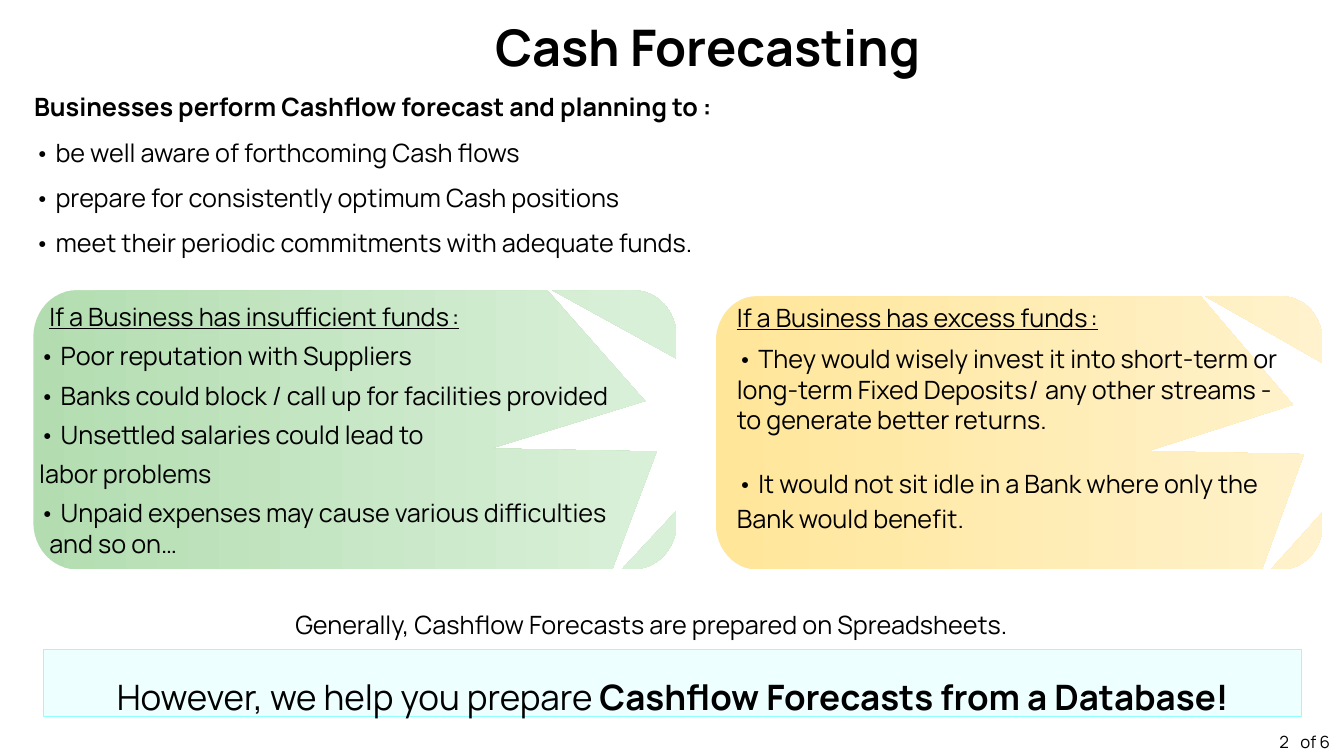
from math import cos, pi, sin
from pptx import Presentation
from pptx.dml.color import RGBColor
from pptx.enum.shapes import MSO_SHAPE
from pptx.enum.text import MSO_ANCHOR, PP_ALIGN
from pptx.util import Inches, Pt

WIDE, HIGH = Inches(13.33), Inches(7.5)
COL, ROW = WIDE / 100, HIGH / 100
FONT = "Manrope"
HUES = {
    "ink": "000000", "pale": "EDFFFF", "edge": "8FFFFF",
    "moss": "B3DDB1", "mint": "D9F0D8", "gold": "FFE699", "cream": "FFF2CC",
}
BOLD = {"bold": True}
LINE = {"underline": True}
MID = {"vertical_anchor": MSO_ANCHOR.MIDDLE}
FLAT = {f"margin_{side}": 0 for side in ("left", "top", "right", "bottom")}
CENTRE = {"alignment": PP_ALIGN.CENTER}
OPEN = {"line_spacing": 1.5}
LOOSE = {"line_spacing": 1.3}


def hue(name):
    """Return the named colour."""
    return RGBColor.from_string(HUES[name])


def style(item, form):
    """Set each format value on the item."""
    for key, value in form.items():
        setattr(item, key, value)


def scale(box):
    """Turn columns and rows into slide lengths."""
    return [round(part * unit) for part, unit in zip(box, (COL, ROW) * 2)]


def write(frame, paras, size, form=None):
    """Fill a frame with (runs, format, indent) paragraphs."""
    base = {"word_wrap": True, "vertical_anchor": MSO_ANCHOR.TOP}
    style(frame, base | (form or {}))
    for i, (runs, look, dent) in enumerate(paras):
        para = frame.add_paragraph() if i else frame.paragraphs[0]
        style(para, look)
        if dent:
            para._p.get_or_add_pPr().set("marL", str(Inches(dent)))
        for text, face, gap in runs:
            run = para.add_run()
            run.text = text
            style(run.font, {"name": FONT, "size": Pt(size), "bold": False} | face)
            run.font.color.rgb = hue("ink")
            if gap:
                run.font._element.set("spc", str(gap * 100))


def para(text, look=None, face=None, dent=0):
    """Describe a paragraph with one run."""
    return [(text, face or {}, 0)], look or {}, dent


def head(text, dent=0):
    """Describe an underlined heading with a spaced ending."""
    return [(text[:-2], LINE, 0), (text[-2:], LINE, 2)], {}, dent


def label(slide, box, paras, size=18, form=None):
    """Add a text box."""
    write(slide.shapes.add_textbox(*scale(box)).text_frame, paras, size, form)


def arc(x, y, turn):
    """List points of a quarter corner around a centre, as shares."""
    steps = [(turn + i / 12) * pi / 2 for i in range(13)]
    return [(x + 0.067 * cos(a), y + 0.167 * sin(a)) for a in steps]


def panel(slide, box, tints, stop, texts):
    """Draw a shaded card cut by white rays, with its texts."""
    left, top, wide, high = scale(box)
    low, east, west = 0.833, 0.933, 0.067
    parts = [
        [(1, 0.79), *arc(east, low, 0), (0.915, 1)],
        [(0.807, 0), *arc(east, 0.167, 3), (1, 0.245)],
        [(0.799, 0), (0.951, 0.397), (0.712, 0.567), (0.969, 0.578), (0.9, 1),
         *arc(west, low, 1), *arc(west, 0.167, 2)],
    ]
    pen = None
    for part in parts:
        dots = [(left + x * wide, top + y * high) for x, y in part]
        if pen:
            pen.move_to(*dots[0])
        else:
            pen = slide.shapes.build_freeform(*dots[0])
        pen.add_line_segments(dots[1:], close=True)
    card = pen.convert_to_shape()
    card.shadow.inherit = False
    card.line.fill.background()
    card.fill.gradient()
    card.fill.gradient_angle = 0
    for mark, tint, spot in zip(card.fill.gradient_stops, tints, (0, stop)):
        mark.color.rgb = hue(tint)
        mark.position = spot
    for (dx, dy, w, h), paras in texts:
        label(slide, (box[0] + dx, box[1] + dy, w, h), paras)


def top(slide):
    """Place the title and the list of aims."""
    title = slide.shapes.title
    spot = scale((33.68, 2.13, 37.96, 8.13))
    style(title, dict(zip(("left", "top", "width", "height"), spot)))
    write(title.text_frame, [para("Cash Forecasting", CENTRE, BOLD)], 36, FLAT)
    aims = [
        "• be well aware of forthcoming Cash flows",
        "• prepare for consistently optimum Cash positions",
        "• meet their periodic commitments with adequate funds.",
    ]
    lead = para("Businesses perform Cashflow forecast and planning to :", OPEN, BOLD)
    label(slide, (1.8, 9.6, 56.79, 25.07),
          [lead, *(para(aim, OPEN) for aim in aims)], form=MID)


def cards(slide):
    """Place the two cases side by side."""
    risks = [
        "• Poor reputation with Suppliers",
        "• Banks could block / call up for facilities provided",
        "• Unsettled salaries could lead to",
        "labor problems",
        "• Unpaid expenses may cause various difficulties",
    ]
    short = [head("If a Business has insufficient funds:", 0.1),
             *(para(risk, LOOSE) for risk in risks),
             para("and so on…", dent=0.1)]
    panel(slide, (2.48, 38.4, 47.86, 36.9), ("moss", "mint"), 0.96,
          [((-0.3, 0.8, 50.64, 36), short)])
    invest = [("• They would wisely invest it into short-term or long-term Fixed Deposit", {}, 0),
              ("s/", {}, 1),
              (" any other streams - to generate better returns.", {}, 0)]
    idle = para("• It would not sit idle in a Bank where only the Bank would benefit.",
                {"line_spacing": 1.15, "space_before": Pt(21.4)})
    panel(slide, (53.26, 39.2, 45.16, 36.1), ("gold", "cream"), 1,
          [((0.83, 0.13, 36, 8), [head("If a Business has excess funds:")]),
           ((0.83, 5.6, 42.69, 26.53), [(invest, {}, 0), idle])])


def foot(slide):
    """Place the closing note, the banner and the page count."""
    label(slide, (21.23, 79.87, 65.79, 5.33),
          [para("Generally, Cashflow Forecasts are prepared on Spreadsheets.")], form=MID)
    bar = slide.shapes.add_shape(MSO_SHAPE.RECTANGLE, *scale((3.23, 85.87, 93.62, 8.93)))
    bar.shadow.inherit = False
    bar.fill.solid()
    bar.fill.fore_color.rgb = hue("pale")
    bar.line.color.rgb = hue("edge")
    bar.line.width = Pt(0.75)
    runs = [("However, we help you prepare ", {}, 0),
            ("Cashflow Forecasts from a Database!", BOLD, 0)]
    write(bar.text_frame, [(runs, CENTRE | OPEN, 0)], 25)
    for x, text in ((94.45, "2"), (96.02, "of 6")):
        label(slide, (x, 96.13, 3.9, 4), [para(text)], 12, {"word_wrap": False})


def main():
    """Build and save the slide."""
    deck = Presentation()
    style(deck, {"slide_width": WIDE, "slide_height": HIGH})
    slide = deck.slides.add_slide(deck.slide_layouts[5])
    for region in (top, cards, foot):
        region(slide)
    deck.save("out.pptx")


if __name__ == "__main__":
    main()
